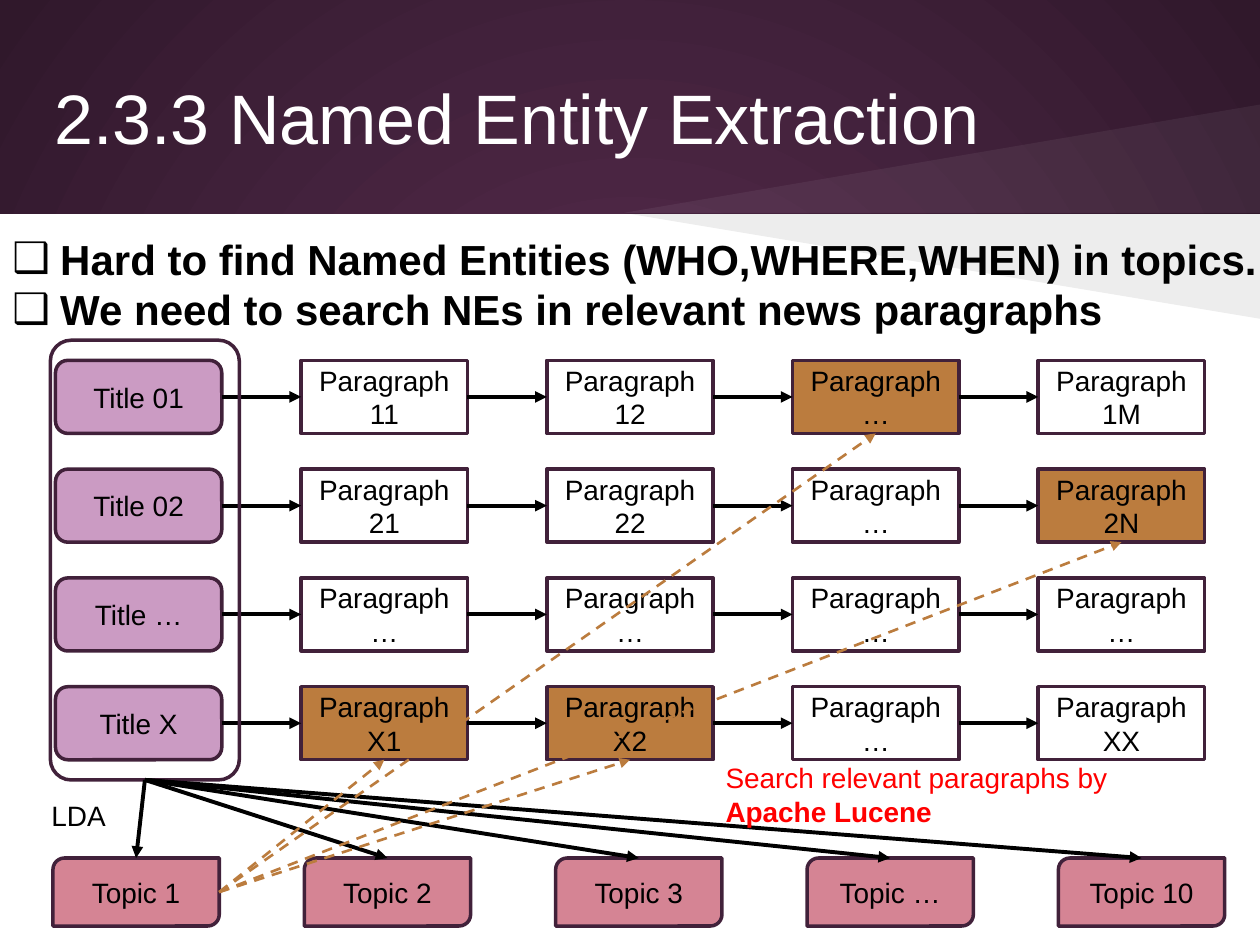
from lxml.etree import SubElement
from pptx import Presentation
from pptx.dml.color import RGBColor
from pptx.enum.dml import MSO_LINE
from pptx.enum.shapes import MSO_CONNECTOR, MSO_SHAPE
from pptx.enum.text import MSO_ANCHOR, PP_ALIGN
from pptx.oxml.ns import qn
from pptx.util import Inches, Pt

BLACK, WHITE, RED = "000000", "FFFFFF", "FF0000"
PLUM, LILAC, ROSE, BROWN = "41213A", "CB9BC3", "D58494", "BB7C3E"
TOP, LEFT, BOTTOM, RIGHT = range(4)
ROWS = [
    ("Title 01", ["11", "12", "…", "1M"]),
    ("Title 02", ["21", "22", "…", "2N"]),
    ("Title …", ["…", "…", "…", "…"]),
    ("Title X", ["X1", "X2", "…", "XX"]),
]
RELEVANT = [(3, 0), (3, 1), (0, 2), (1, 3)]
TOPICS = ["Topic 1", "Topic 2", "Topic 3", "Topic …", "Topic 10"]
BOX_W, BOX_H = 1.32, 0.58
TOPIC_Y, TOPIC_H = 6.81, 0.54


def rgb(value):
    return RGBColor.from_string(value)


class SlideBuilder:
    font = {"name": "Arial", "size": Pt(16), "bold": False}

    def __init__(self, slide):
        self.s = slide

    def background(self, inner, outer):
        fill = self.s.background.fill
        fill.gradient()
        for stop, color, pos in zip(fill.gradient_stops, (inner, outer), (0, 1)):
            stop.color.rgb = rgb(color)
            stop.position = pos
        grad = self.s.background._cSld.find(".//" + qn("a:gradFill"))
        grad.remove(grad.find(qn("a:lin")))
        circle = SubElement(grad, qn("a:path"), path="circle")
        SubElement(circle, qn("a:fillToRect"), l="50000", t="50000", r="50000", b="50000")

    def paint(self, sp, fill=None, line=None, alpha=None):
        sp.shadow.inherit = False
        if fill:
            sp.fill.solid()
            sp.fill.fore_color.rgb = rgb(fill)
        else:
            sp.fill.background()
        if alpha:
            clr = sp._element.spPr.find(qn("a:solidFill"))[0]
            SubElement(clr, qn("a:alpha"), val=str(alpha * 1000))
        if line:
            sp.line.color.rgb = rgb(line)
            sp.line.width = Pt(2)
        else:
            sp.line.fill.background()

    def run(self, p, text, color=BLACK, **style):
        r = p.add_run()
        r.text = text
        for name, value in {**self.font, **style}.items():
            setattr(r.font, name, value)
        r.font.color.rgb = rgb(color)

    def box(self, kind, x, y, w, h, text="", fill=None, line=PLUM, radius=None):
        sp = self.s.shapes.add_shape(kind, Inches(x), Inches(y), Inches(w), Inches(h))
        self.paint(sp, fill, line)
        if radius:
            sp.adjustments[0] = radius
        if text:
            tf = sp.text_frame
            tf.word_wrap = True
            tf.vertical_anchor = MSO_ANCHOR.MIDDLE
            p = tf.paragraphs[0]
            p.alignment = PP_ALIGN.CENTER
            self.run(p, text)
        return sp

    def wedge(self, points, color, alpha):
        start, *rest = [(Inches(x), Inches(y)) for x, y in points]
        fb = self.s.shapes.build_freeform(*start)
        fb.add_line_segments(rest)
        self.paint(fb.convert_to_shape(), color, alpha=alpha)

    def text(self, x, y, w, h, **frame):
        sp = self.s.shapes.add_textbox(Inches(x), Inches(y), Inches(w), Inches(h))
        for name, value in {"word_wrap": True, **frame}.items():
            setattr(sp.text_frame, name, value)
        return sp.text_frame

    def bullet(self, p, char):
        pPr = p._p.get_or_add_pPr()
        pPr.set("marL", str(Inches(0.38)))
        pPr.set("indent", str(-Inches(0.38)))
        clr = SubElement(pPr, qn("a:buClr"))
        SubElement(clr, qn("a:srgbClr"), val=BLACK)
        SubElement(pPr, qn("a:buFont"), typeface="Arial")
        SubElement(pPr, qn("a:buChar"), char=char)

    def arrow(self, start, end, begin=None, finish=None, color=BLACK, width=2.25, dash=None):
        ends = [Inches(v) for v in (*start, *end)]
        cx = self.s.shapes.add_connector(MSO_CONNECTOR.STRAIGHT, *ends)
        if begin:
            cx.begin_connect(*begin)
        if finish:
            cx.end_connect(*finish)
        cx.line.color.rgb = rgb(color)
        cx.line.width = Pt(width)
        if dash:
            cx.line.dash_style = dash
        SubElement(cx.line._get_or_add_ln(), qn("a:tailEnd"), type="triangle")
        SubElement(cx._element.spPr, qn("a:effectLst"))


def main():
    prs = Presentation()
    prs.slide_width, prs.slide_height = Inches(10), Inches(7.5)
    b = SlideBuilder(prs.slides.add_slide(prs.slide_layouts[6]))

    b.background("592D50", "30182B")
    b.box(MSO_SHAPE.RECTANGLE, 0, 1.7, 10, 5.8, fill=WHITE, line=None)
    for tip, color, alpha in [(0.83, WHITE, 6), (2.53, BLACK, 7)]:
        b.wedge([(10, 1.69), (4.95, 1.69), (10, tip)], color, alpha)

    tf = b.text(0, 0.3, 10, 1.25, margin_left=Inches(0.43), vertical_anchor=MSO_ANCHOR.MIDDLE)
    b.run(tf.paragraphs[0], "2.3.3 Named Entity Extraction", WHITE, size=Pt(40))

    paragraphs = {}
    for row, (title, names) in enumerate(ROWS):
        y = 2.86 + row * 2.59 / 3
        mid = y + BOX_H / 2
        prev = b.box(MSO_SHAPE.ROUNDED_RECTANGLE, 0.44, y, BOX_W, BOX_H, title, LILAC, radius=0.17)
        for col, name in enumerate(names):
            x = 2.39 + 1.95 * col
            fill = BROWN if (row, col) in RELEVANT else None
            sp = b.box(MSO_SHAPE.RECTANGLE, x, y, BOX_W, BOX_H, f"Paragraph {name}", fill)
            b.arrow((x - 0.63, mid), (x, mid), (prev, RIGHT), (sp, LEFT))
            paragraphs[row, col] = prev = sp

    frame = b.box(MSO_SHAPE.ROUNDED_RECTANGLE, 0.4, 2.7, 1.5, 3.49, radius=0.11)
    for i, topic in enumerate(TOPICS):
        x = 0.42 + i * 7.98 / 4
        b.box(MSO_SHAPE.ROUND_2_DIAG_RECTANGLE, x, TOPIC_Y, BOX_W, TOPIC_H, topic, ROSE, radius=0.17)
        b.arrow((1.15, 6.19), (x + BOX_W / 2, TOPIC_Y), begin=(frame, BOTTOM))

    for cell in RELEVANT:
        b.arrow((1.74, TOPIC_Y + TOPIC_H / 2), (0, 0), finish=(paragraphs[cell], BOTTOM),
                color=BROWN, width=1.5, dash=MSO_LINE.DASH)

    b.run(b.text(0.31, 6.29, 0.64, 0.37).paragraphs[0], "LDA")
    p = b.text(5.66, 5.99, 3.31, 0.64).paragraphs[0]
    b.run(p, "Search relevant paragraphs by ", RED)
    b.run(p, "Apache Lucene", RED, bold=True)

    tf = b.text(0, 1.8, 10.16, 0.91)
    lines = [
        "Hard to find Named Entities (WHO,WHERE,WHEN) in topics.",
        "We need to search NEs in relevant news paragraphs",
    ]
    for i, line in enumerate(lines):
        p = tf.add_paragraph() if i else tf.paragraphs[0]
        b.bullet(p, "❑")
        b.run(p, line, size=Pt(24), bold=True)

    prs.save("out.pptx")


if __name__ == "__main__":
    main()
